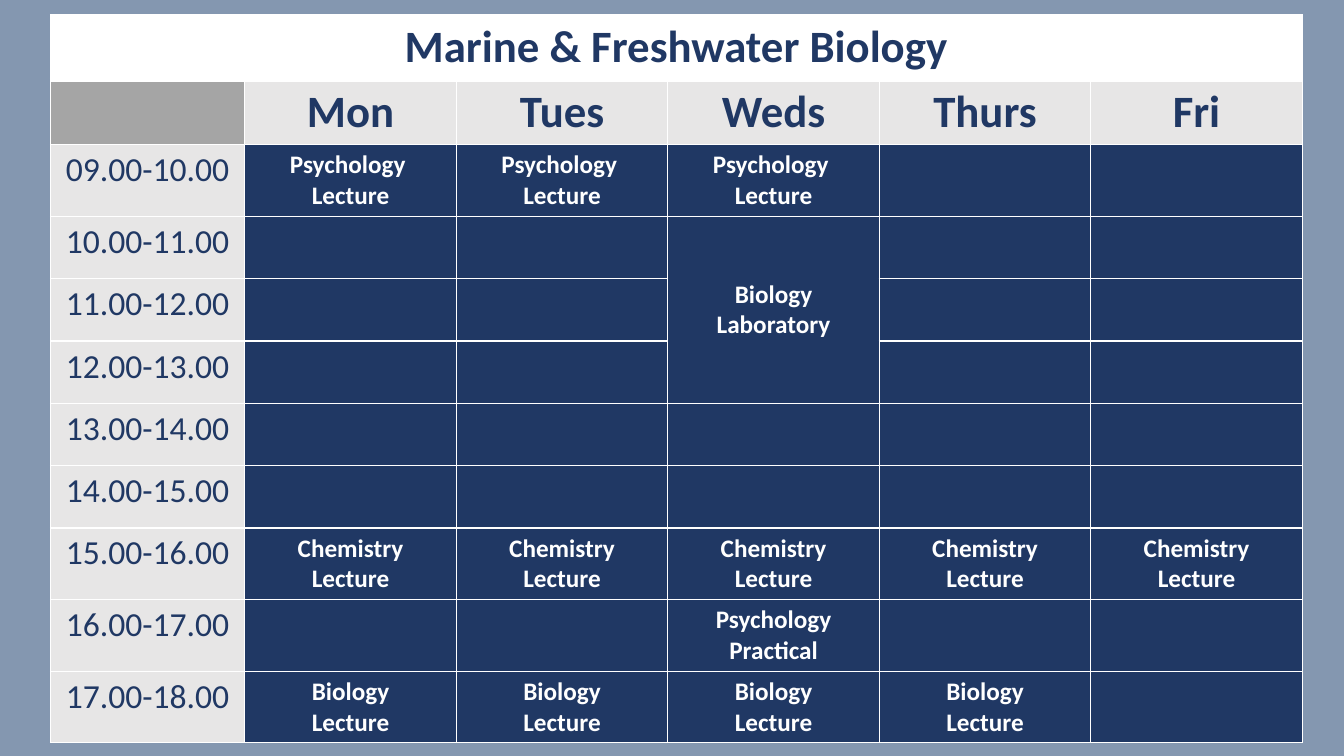
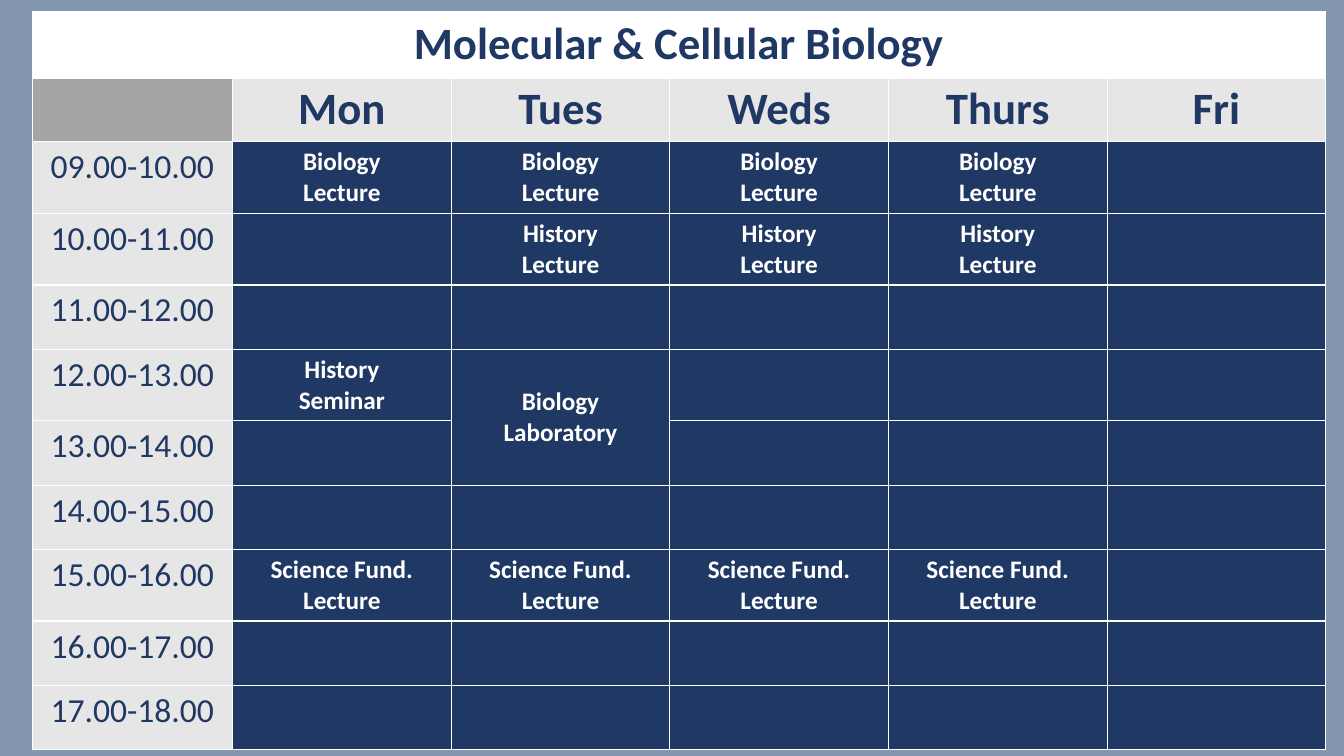
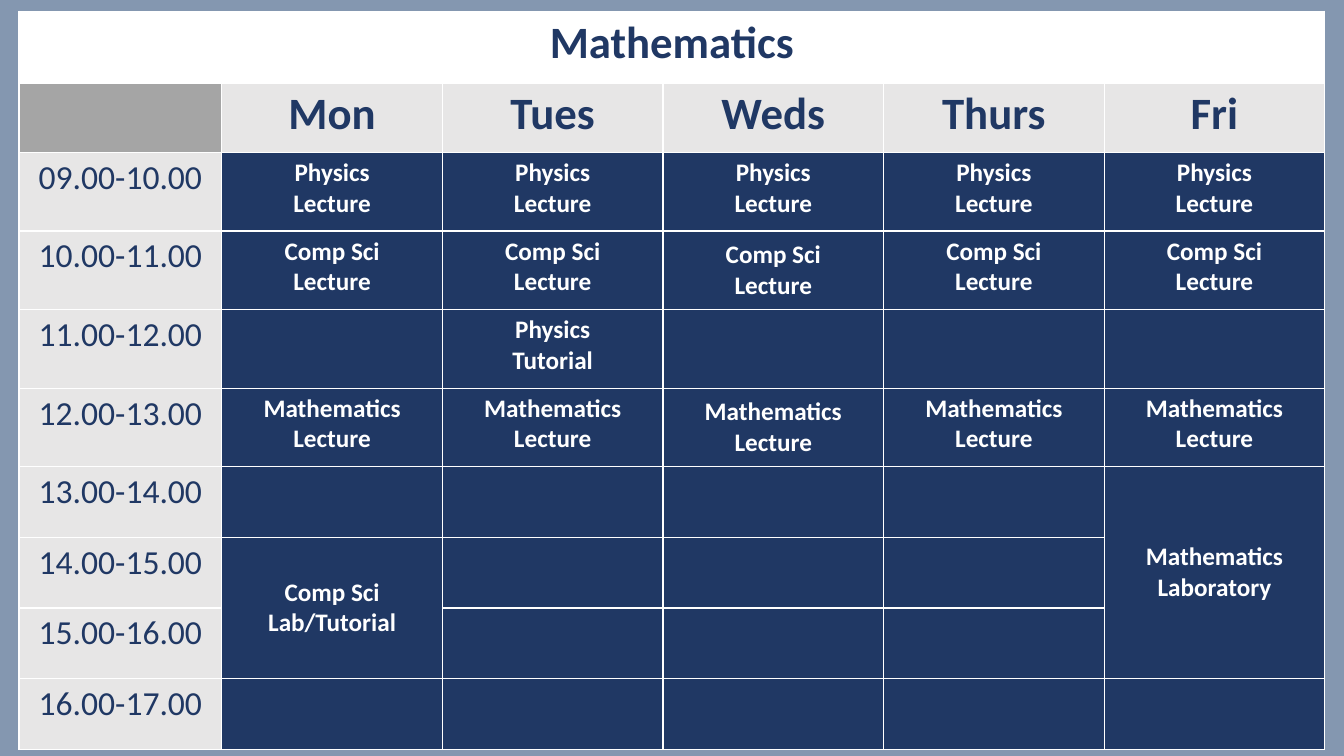
"""Build three weekly course timetables, one table per slide."""
import pptx
import pptx.dml.color
import pptx.enum.text
import pptx.oxml
import pptx.oxml.ns
import pptx.util

Cm = pptx.util.Cm
Pt = pptx.util.Pt

NAVY, WHITE, LIGHT, GREY, SLATE = "203864", "FFFFFF", "E7E6E6", "A5A5A5", "8497B0"
FONT = "Calibri"
DAYS = ["Mon", "Tues", "Weds", "Thurs", "Fri"]
FIRST_HOUR = 9
TOP_ROWS = 2

TIMETABLES = [
    {
        "title": "Marine & Freshwater Biology",
        "left": 1.27, "top": 0.38, "time_width": 4.9, "day_width": 5.33,
        "title_height": 1.5, "free_height": 1.57, "busy_height": 1.73,
        "last_hour": 18,
        "sessions": [
            ("Mon Tues Weds", 9, 1, "Psychology ", "Lecture"),
            ("Weds", 10, 3, "Biology", "Laboratory"),
            ("Mon Tues Weds Thurs Fri", 15, 1, "Chemistry", "Lecture"),
            ("Weds", 16, 1, "Psychology", "Practical"),
            ("Mon Tues Weds Thurs", 17, 1, "Biology", "Lecture"),
        ],
        "middle": [],
    },
    {
        "title": "Molecular & Cellular Biology",
        "left": 0.81, "top": 0.3, "time_width": 5.05, "day_width": 5.51,
        "title_height": 1.53, "free_height": 1.62, "busy_height": 1.8,
        "last_hour": 18,
        "sessions": [
            ("Mon Tues Weds Thurs", 9, 1, "Biology", "Lecture"),
            ("Tues Weds Thurs", 10, 1, "History", "Lecture"),
            ("Mon", 12, 1, "History", "Seminar"),
            ("Tues", 12, 2, "Biology", "Laboratory"),
            ("Mon Tues Weds Thurs", 15, 1, "Science Fund.", "Lecture"),
        ],
        "middle": [("Weds", 10)],
    },
    {
        "title": "Mathematics",
        "left": 0.48, "top": 0.28, "time_width": 5.11, "day_width": 5.56,
        "title_height": 1.78, "free_height": 1.78, "busy_height": 1.98,
        "last_hour": 17,
        "sessions": [
            ("Mon Tues Weds Thurs Fri", 9, 1, "Physics", "Lecture"),
            ("Mon Tues Weds Thurs Fri", 10, 1, "Comp Sci", "Lecture"),
            ("Tues", 11, 1, "Physics", "Tutorial"),
            ("Mon Tues Weds Thurs Fri", 12, 1, "Mathematics", "Lecture"),
            ("Fri", 13, 3, "Mathematics", "Laboratory"),
            ("Mon", 14, 2, "Comp Sci", "Lab/Tutorial"),
        ],
        "middle": [("Weds", 10), ("Weds", 12)],
    },
]


def colour(value):
    return pptx.dml.color.RGBColor.from_string(value)


def write(cell, text, size=18, color=WHITE, bold=True, middle=False):
    frame = cell.text_frame
    frame.text = text
    if middle:
        cell.vertical_anchor = pptx.enum.text.MSO_ANCHOR.MIDDLE
    for para in frame.paragraphs:
        para.alignment = pptx.enum.text.PP_ALIGN.CENTER
        for span in para.runs:
            span.font.name = FONT
            span.font.size = Pt(size)
            span.font.bold = bold
            span.font.color.rgb = colour(color)


def paint(cell, fill, bottom=1):
    properties = cell._tc.get_or_add_tcPr()
    for side, width in (("L", 1), ("R", 1), ("T", 1), ("B", bottom)):
        properties.append(pptx.oxml.parse_xml(
            f'<a:ln{side} {pptx.oxml.ns.nsdecls("a")} w="{Pt(width)}"><a:solidFill>'
            f'<a:srgbClr val="{WHITE}"/></a:solidFill></a:ln{side}>'))
    cell.fill.solid()
    cell.fill.fore_color.rgb = colour(fill)


def cell_fill(row, column):
    if row == 0:
        return WHITE
    if row == 1:
        return LIGHT if column else GREY
    return NAVY if column else LIGHT


def row_heights(plan, hours):
    busy = {start for _, start, length, *_ in plan["sessions"] if length == 1}
    slots = [plan["busy_height"] if hour in busy else plan["free_height"] for hour in hours]
    return [plan["title_height"], plan["free_height"], *slots]


def add_timetable(page, plan):
    hours = range(FIRST_HOUR, plan["last_hour"])
    heights = row_heights(plan, hours)
    widths = [plan["time_width"]] + [plan["day_width"]] * len(DAYS)
    table = page.shapes.add_table(
        len(heights), len(widths), Cm(plan["left"]), Cm(plan["top"]),
        Cm(sum(widths)), Cm(sum(heights))).table
    table.first_row = table.horz_banding = False
    for column, width in zip(table.columns, widths):
        column.width = Cm(width)
    for row, height in zip(table.rows, heights):
        row.height = Cm(height)
    for row in range(len(heights)):
        for column in range(len(widths)):
            paint(table.cell(row, column), cell_fill(row, column), 1 if row else 3)

    table.cell(0, 0).merge(table.cell(0, len(DAYS)))
    write(table.cell(0, 0), plan["title"], size=32, color=NAVY)
    for column, day in enumerate(DAYS, 1):
        write(table.cell(1, column), day, size=32, color=NAVY)
    for row, hour in enumerate(hours, TOP_ROWS):
        write(table.cell(row, 0), f"{hour:02}.00-{hour + 1}.00", size=24, color=NAVY, bold=False)
    for days, start, length, subject, kind in plan["sessions"]:
        row = start - FIRST_HOUR + TOP_ROWS
        for day in days.split():
            column = DAYS.index(day) + 1
            cell = table.cell(row, column)
            if length > 1:
                cell.merge(table.cell(row + length - 1, column))
            write(cell, f"{subject}\n{kind}",
                  middle=length > 1 or (day, start) in plan["middle"])


def main():
    deck = pptx.Presentation()
    deck.slide_width, deck.slide_height = Cm(33.87), Cm(19.05)
    background = deck.slide_master.background.fill
    background.solid()
    background.fore_color.rgb = colour(SLATE)
    blank = deck.slide_layouts.get_by_name("Blank")
    for plan in TIMETABLES:
        add_timetable(deck.slides.add_slide(blank), plan)
    deck.save("out.pptx")


if __name__ == "__main__":
    main()
